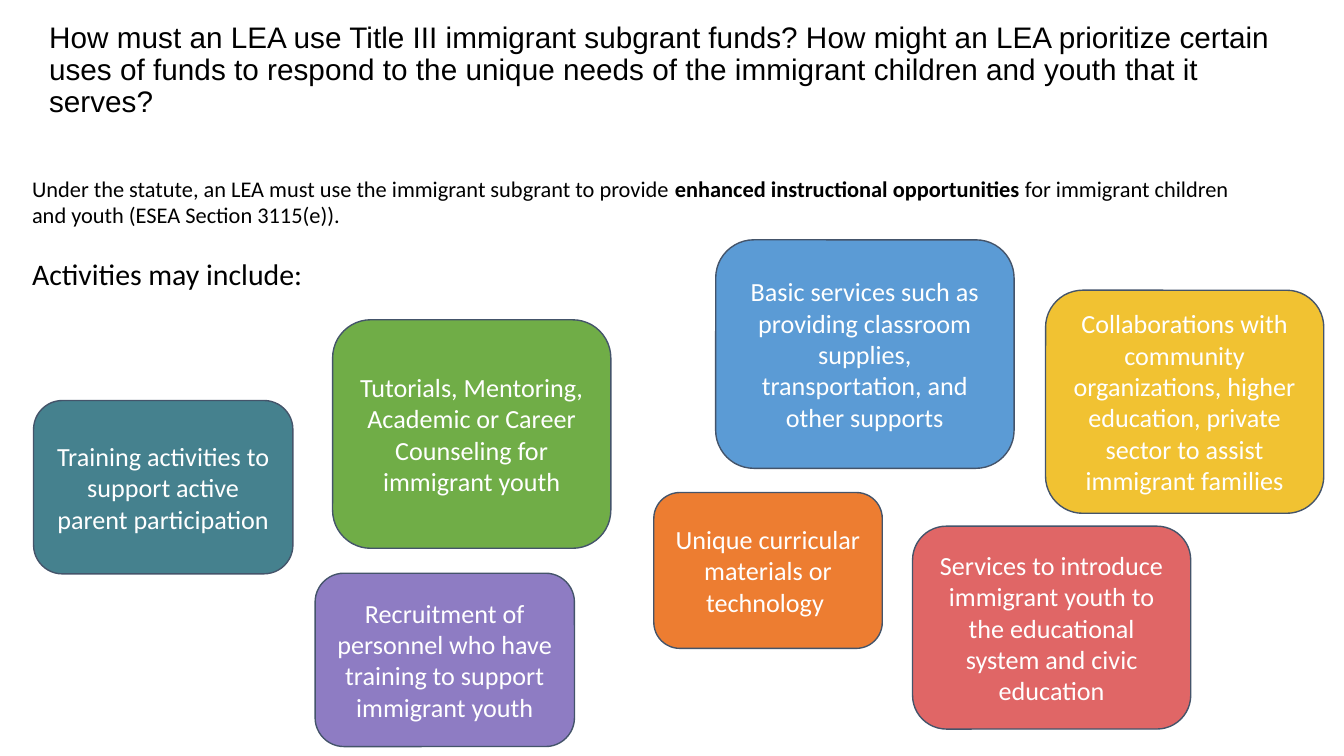
import pptx
import pptx.dml.color
import pptx.enum.shapes
import pptx.enum.text
import pptx.util

RGBColor = pptx.dml.color.RGBColor
ANCHOR = pptx.enum.text.MSO_ANCHOR
ALIGN = pptx.enum.text.PP_ALIGN
AUTO_SIZE = pptx.enum.text.MSO_AUTO_SIZE
Pt = pptx.util.Pt

EMU_PER_PX = 4572  # 200 px to the inch

BLACK = RGBColor(0x00, 0x00, 0x00)
WHITE = RGBColor(0xFF, 0xFF, 0xFF)
SLATE = RGBColor(0x44, 0x54, 0x6A)
TEAL = RGBColor(0x45, 0x81, 0x8E)
GREEN = RGBColor(0x70, 0xAD, 0x47)
PURPLE = RGBColor(0x8E, 0x7C, 0xC3)
ORANGE = RGBColor(0xED, 0x7D, 0x31)
BLUE = RGBColor(0x5B, 0x9B, 0xD5)
RED = RGBColor(0xE0, 0x66, 0x66)
YELLOW = RGBColor(0xF1, 0xC2, 0x32)

TITLE_FONT = {"name": "Arial", "size": Pt(15.9)}
STATUTE_FONT = {"name": "Calibri", "size": Pt(12)}
LEAD_IN_FONT = {"name": "Calibri", "size": Pt(16)}
CARD_FONT = {"name": "Calibri", "size": Pt(14)}

TITLE = (
    "How must an LEA use Title III immigrant subgrant funds? How might an LEA "
    "prioritize certain uses of funds to respond to the unique needs of the "
    "immigrant children and youth that it serves?"
)

# Box (left, top, width, height), fill, text
ACTIVITIES = [
    ((50, 596, 386, 258), TEAL,
     "Training activities to support active parent participation "),
    ((495, 476, 414, 340), GREEN,
     "Tutorials, Mentoring, Academic or Career Counseling for immigrant youth"),
    ((469, 853, 386, 258), PURPLE,
     "Recruitment of personnel who have training to support immigrant youth"),
    ((973, 733, 340, 232), ORANGE,
     "Unique curricular materials or technology "),
    ((1065, 357, 444, 340), BLUE,
     "Basic services such as providing classroom supplies, transportation, "
     "and other supports"),
    ((1358, 783, 414, 302), RED,
     "Services to introduce immigrant youth to the educational system and "
     "civic education"),
    ((1556, 432, 414, 332), YELLOW,
     "Collaborations with community organizations, higher education, private "
     "sector to assist immigrant families"),
]


def px(length):
    return pptx.util.Emu(length * EMU_PER_PX)


def set_attributes(target, values):
    for name, value in values.items():
        setattr(target, name, value)


def format_frame(text_frame, inset, anchor):
    sides = ("margin_left", "margin_top", "margin_right", "margin_bottom")
    set_attributes(text_frame, dict.fromkeys(sides, px(inset)))
    set_attributes(text_frame, {"word_wrap": True, "vertical_anchor": anchor})


def add_run(paragraph, text, font_values, color, bold=False):
    run = paragraph.add_run()
    run.text = text
    set_attributes(run.font, {**font_values, "bold": bold})
    run.font.color.rgb = color


def add_title(slide, box):
    text_frame = slide.shapes.add_textbox(*map(px, box)).text_frame
    format_frame(text_frame, 0, ANCHOR.TOP)
    paragraph = text_frame.paragraphs[0]
    paragraph.line_spacing = 0.9
    add_run(paragraph, TITLE, TITLE_FONT, BLACK)


def add_introduction(slide, box):
    text_frame = slide.shapes.add_textbox(*map(px, box)).text_frame
    format_frame(text_frame, 20, ANCHOR.TOP)
    text_frame.auto_size = AUTO_SIZE.SHAPE_TO_FIT_TEXT
    statute = text_frame.paragraphs[0]
    for text, bold in [
        ("Under the statute, an LEA must use the immigrant subgrant to provide", False),
        (" enhanced instructional opportunities", True),
        (" for immigrant children and youth (ESEA Section 3115(e)).", False),
    ]:
        add_run(statute, text, STATUTE_FONT, BLACK, bold)
    lead_in = text_frame.add_paragraph()
    lead_in.space_before = Pt(14.6)
    add_run(lead_in, "Activities may include:", LEAD_IN_FONT, BLACK)


def add_activity_card(slide, box, color, text):
    card = slide.shapes.add_shape(
        pptx.enum.shapes.MSO_SHAPE.FLOWCHART_ALTERNATE_PROCESS, *map(px, box))
    card.shadow.inherit = False
    card.fill.solid()
    card.fill.fore_color.rgb = color
    card.line.color.rgb = SLATE
    card.line.width = Pt(0.75)
    format_frame(card.text_frame, 20, ANCHOR.MIDDLE)
    paragraph = card.text_frame.paragraphs[0]
    paragraph.alignment = ALIGN.CENTER
    add_run(paragraph, text, CARD_FONT, WHITE)


def main():
    presentation = pptx.Presentation()
    set_attributes(presentation, {"slide_width": px(2000), "slide_height": px(1125)})
    slide = presentation.slides.add_slide(presentation.slide_layouts[6])
    add_title(slide, (73, 34, 1824, 148))
    add_introduction(slide, (28, 240, 1858, 250))
    for box, color, text in ACTIVITIES:
        add_activity_card(slide, box, color, text)
    presentation.save("out.pptx")


if __name__ == "__main__":
    main()
